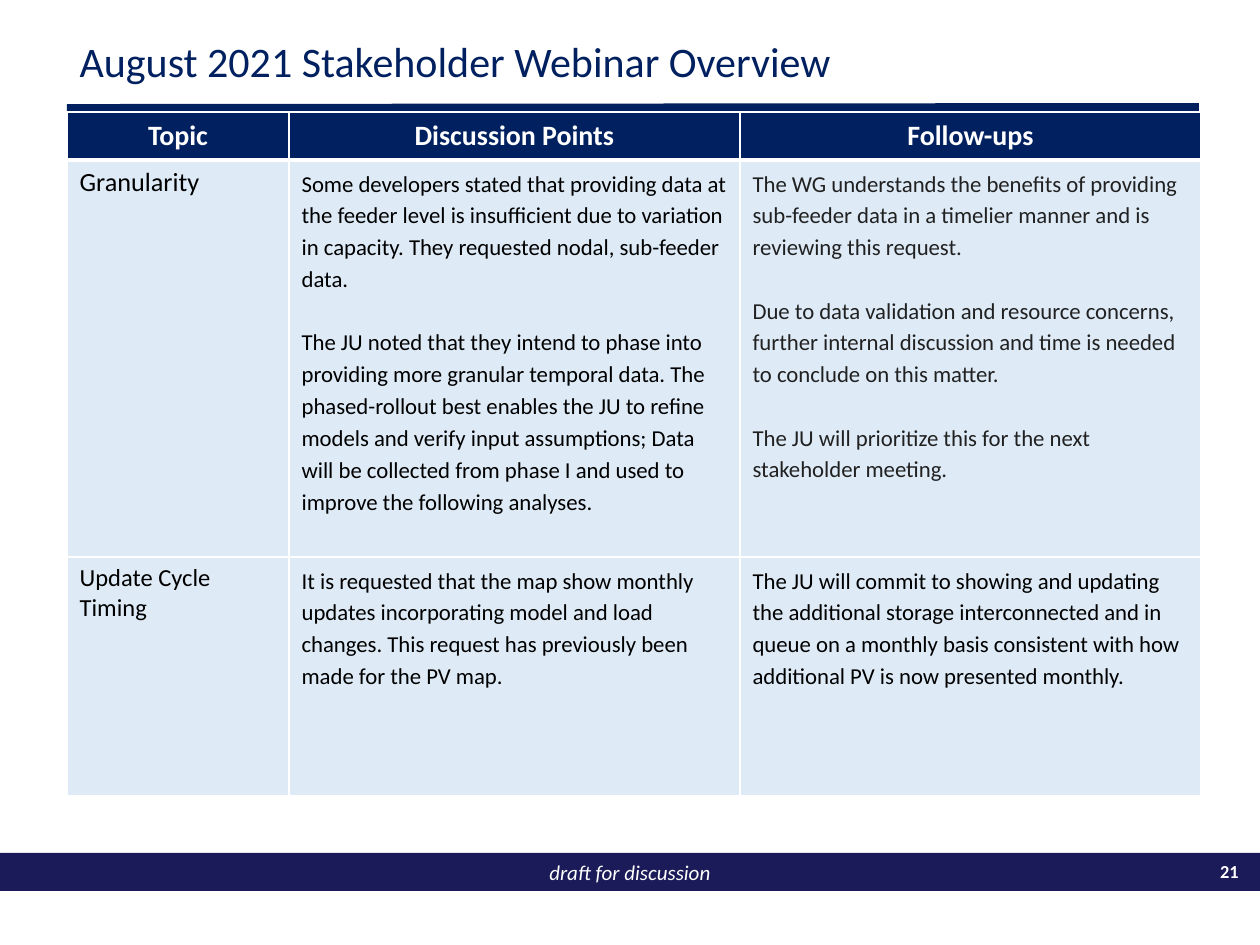
"""Build the stakeholder webinar overview slide."""
from lxml import etree
from pptx import Presentation
from pptx.dml.color import RGBColor
from pptx.enum.shapes import MSO_CONNECTOR, MSO_SHAPE
from pptx.enum.text import MSO_ANCHOR, PP_ALIGN
from pptx.oxml.ns import qn
from pptx.util import Emu, Pt

LEFT, CENTER, RIGHT = PP_ALIGN.LEFT, PP_ALIGN.CENTER, PP_ALIGN.RIGHT
TOP, MIDDLE = MSO_ANCHOR.TOP, MSO_ANCHOR.MIDDLE
STRAIGHT, RECT = MSO_CONNECTOR.STRAIGHT, MSO_SHAPE.RECTANGLE
EMU_PER_PX = 914400 / 126
FONT = "Calibri"
COLORS = {
    "navy": "002060",
    "footer": "1B1B59",
    "cell": "DEEBF7",
    "white": "FFFFFF",
    "black": "000000",
    "gray": "212121",
}

HEADERS = ["Topic", "Discussion Points", "Follow-ups"]
COL_WIDTHS = [222, 451, 461]
ROW_HEIGHTS = [48, 397, 239]
ROWS = [
    {
        "topic": "Granularity",
        "topic_size": 15,
        "points": [
            "Some developers stated that providing data at the feeder level is insufficient "
            "due to variation in capacity. They requested nodal, sub-feeder data.",
            "The JU noted that they intend to phase into providing more granular temporal data. "
            "The phased-rollout best enables the JU to refine models and verify input "
            "assumptions; Data will be collected from phase I and used to improve the "
            "following analyses.",
        ],
        "follow_ups": [
            "The WG understands the benefits of providing sub-feeder data in a timelier manner "
            "and is reviewing this request.",
            "Due to data validation and resource concerns, further internal discussion and time "
            "is needed to conclude on this matter.",
            "The JU will prioritize this for the next stakeholder meeting.",
        ],
        "follow_up_color": "gray",
    },
    {
        "topic": "Update Cycle Timing",
        "topic_size": 14,
        "points": [
            "It is requested that the map show monthly updates incorporating model and load "
            "changes. This request has previously been made for the PV map.",
        ],
        "follow_ups": [
            "The JU will commit to showing and updating the additional storage interconnected "
            "and in queue on a monthly basis consistent with how additional PV is now "
            "presented monthly.",
        ],
        "follow_up_color": "black",
    },
]


def px(n):
    return Emu(round(n * EMU_PER_PX))


def rgb(name):
    return RGBColor.from_string(COLORS[name])


class Deck:
    def __init__(self, width, height):
        self.prs = Presentation()
        self.prs.slide_width, self.prs.slide_height = px(width), px(height)
        self.s = self.prs.slides.add_slide(self.prs.slide_layouts[5])

    def fill_text(self, tf, texts, size, color, align=LEFT, bold=False, italic=False,
                  spacing=1.0, gap=0):
        tf.word_wrap = True
        for i, text in enumerate(texts):
            p = tf.add_paragraph() if i else tf.paragraphs[0]
            p.text = text
            p.alignment = align
            p.line_spacing = spacing
            p.space_before = Pt(gap if i else 0)
            p.font.name, p.font.size = FONT, Pt(size)
            p.font.bold, p.font.italic = bold, italic
            p.font.color.rgb = rgb(color)

    def title(self, text, x, y, w, h):
        sp = self.s.shapes.title
        sp.left, sp.top, sp.width, sp.height = map(px, (x, y, w, h))
        sp.text_frame.vertical_anchor = MIDDLE
        self.fill_text(sp.text_frame, [text], 24, "navy", spacing=0.9)

    def bar(self, text, x, y, w, h):
        sp = self.s.shapes.add_shape(RECT, *map(px, (x, y, w, h)))
        sp.shadow.inherit = False
        sp.fill.solid()
        sp.fill.fore_color.rgb = rgb("footer")
        sp.line.fill.background()
        self.fill_text(sp.text_frame, [text], 12, "white", CENTER, italic=True)

    def page_number(self, text, x, y, w, h):
        sp = self.s.shapes.add_textbox(*map(px, (x, y, w, h)))
        self.fill_text(sp.text_frame, [text], 10.5, "white", RIGHT, bold=True)

    def rule(self, x1, y1, x2, y2):
        line = self.s.shapes.add_connector(STRAIGHT, *map(px, (x1, y1, x2, y2)))
        line.line.color.rgb = rgb("navy")
        line.line.width = Pt(4.5)
        etree.SubElement(line._element.spPr, qn("a:effectLst"))

    def table(self, x, y, col_widths, row_heights):
        size = sum(col_widths), sum(row_heights)
        frame = self.s.shapes.add_table(len(row_heights), len(col_widths),
                                        *map(px, (x, y, *size)))
        for col, w in zip(frame.table.columns, col_widths):
            col.width = px(w)
        for row, h in zip(frame.table.rows, row_heights):
            row.height = px(h)
        return frame.table

    def cell(self, cell, texts, fill, top, bottom, anchor=TOP, **style):
        cell.fill.solid()
        cell.fill.fore_color.rgb = rgb(fill)
        cell.vertical_anchor = anchor
        self.fill_text(cell.text_frame, texts, **style)
        tc_pr = cell._tc.get_or_add_tcPr()
        for i, (side, width) in enumerate(zip("LRTB", (1, 1, top, bottom))):
            ln = etree.Element(qn(f"a:ln{side}"), w=str(Pt(width)))
            solid = etree.SubElement(ln, qn("a:solidFill"))
            etree.SubElement(solid, qn("a:srgbClr"), val=COLORS["white"])
            tc_pr.insert(i, ln)


def main():
    deck = Deck(1260, 945)
    deck.bar("draft for discussion", 0, 853, 1260, 38)
    deck.page_number("21", 1200, 854, 51, 37)
    deck.rule(67, 108, 1199, 107)
    deck.title("August 2021 Stakeholder Webinar Overview", 67, 35, 1133, 57)

    table = deck.table(67, 112, COL_WIDTHS, ROW_HEIGHTS)
    for c, header in enumerate(HEADERS):
        deck.cell(table.cell(0, c), [header], "navy", 1, 3, MIDDLE,
                  size=16, color="white", align=CENTER, bold=True)
    body = {"size": 13, "spacing": 1.15, "gap": 18}
    for r, row in enumerate(ROWS, 1):
        top = 3 if r == 1 else 1
        deck.cell(table.cell(r, 0), [row["topic"]], "cell", top, 1,
                  size=row["topic_size"], color="black")
        deck.cell(table.cell(r, 1), row["points"], "cell", top, 1, color="black", **body)
        deck.cell(table.cell(r, 2), row["follow_ups"], "cell", top, 1,
                  color=row["follow_up_color"], **body)
    deck.prs.save("out.pptx")


if __name__ == "__main__":
    main()
